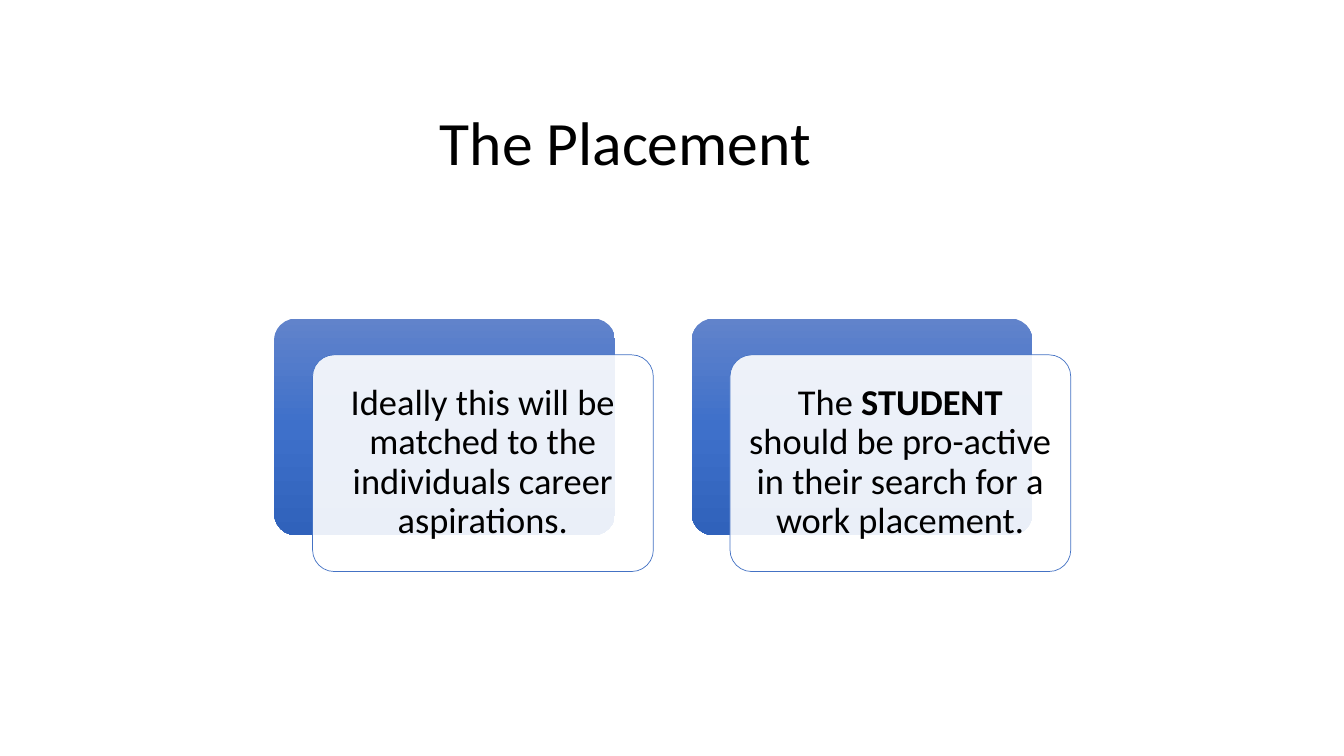
import copy
import pptx
import pptx.dml.color
import pptx.enum.shapes
import pptx.enum.text
import pptx.oxml
import pptx.oxml.ns
import pptx.util

Inches = pptx.util.Inches
COLORS = {
    "text": "000000",
    "card": "FFFFFF",
    "line": "4472C4",
    "top": "6183CB",
    "mid": "3E70CA",
    "base": "3062BB",
}


class Slide:
    font = "Calibri"

    def __init__(self, deck):
        self.slide = deck.slides.add_slide(deck.slide_layouts[6])

    def color(self, name):
        return pptx.dml.color.RGBColor.from_string(COLORS[name])

    def panel(self, left, top, width, height):
        shape = self.slide.shapes.add_shape(
            pptx.enum.shapes.MSO_SHAPE.ROUNDED_RECTANGLE,
            Inches(left), Inches(top), Inches(width), Inches(height))
        shape.adjustments[0] = 0.1
        shape.shadow.inherit = False
        return shape

    def back(self, *place):
        shape = self.panel(*place)
        shape.line.fill.background()
        shape.fill.gradient()
        shape.fill.gradient_angle = 270
        stops = shape._element.spPr.find(".//" + pptx.oxml.ns.qn("a:gsLst"))
        stops.append(copy.deepcopy(stops[0]))
        names = ("top", "mid", "base")
        for i, (stop, name) in enumerate(zip(shape.fill.gradient_stops, names)):
            stop.position = i / 2
            stop.color.rgb = self.color(name)

    def card(self, *place):
        shape = self.panel(*place)
        shape.fill.solid()
        shape.fill.fore_color.rgb = self.color("card")
        shape.line.color.rgb = self.color("line")
        shape.line.width = pptx.util.Pt(0.5)
        tint = shape._element.spPr.find(".//" + pptx.oxml.ns.qn("a:srgbClr"))
        alpha = pptx.oxml.parse_xml(
            f'<a:alpha {pptx.oxml.ns.nsdecls("a")} val="90000"/>')
        tint.append(alpha)

    def text(self, left, top, width, height, parts, size, inset):
        box = self.slide.shapes.add_textbox(
            Inches(left), Inches(top), Inches(width), Inches(height))
        frame = box.text_frame
        frame.word_wrap = True
        frame.vertical_anchor = pptx.enum.text.MSO_ANCHOR.MIDDLE
        frame.margin_left = frame.margin_right = Inches(inset)
        frame.margin_top = frame.margin_bottom = Inches(inset)
        line = frame.paragraphs[0]
        line.alignment = pptx.enum.text.PP_ALIGN.CENTER
        line.line_spacing = 0.9
        for words, bold in parts:
            run = line.add_run()
            run.text = words
            run.font.name = self.font
            run.font.size = pptx.util.Pt(size)
            run.font.bold = bold
            run.font.color.rgb = self.color("text")


def main():
    deck = pptx.Presentation()
    deck.slide_width = Inches(13.33)
    deck.slide_height = Inches(7.5)
    page = Slide(deck)
    page.text(2.61, 1.06, 7.19, 0.77, [("The Placement", False)], 44, 0.05)
    notes = [
        [("Ideally this will be matched to the individuals career aspirations.",
          False)],
        [("The ", False), ("STUDENT ", True),
         ("should be pro-active in their search for a work placement.", False)],
    ]
    width, height, top, step = 3.38, 2.15, 3.16, 4.14
    for i, parts in enumerate(notes):
        left = 2.72 + i * step
        page.back(left, top, width, height)
        page.card(left + 0.38, top + 0.36, width, height)
        page.text(left + 0.44, top + 0.42, width - 0.12, height - 0.13,
                  parts, 26, 0.11)
    deck.save("out.pptx")


if __name__ == "__main__":
    main()
